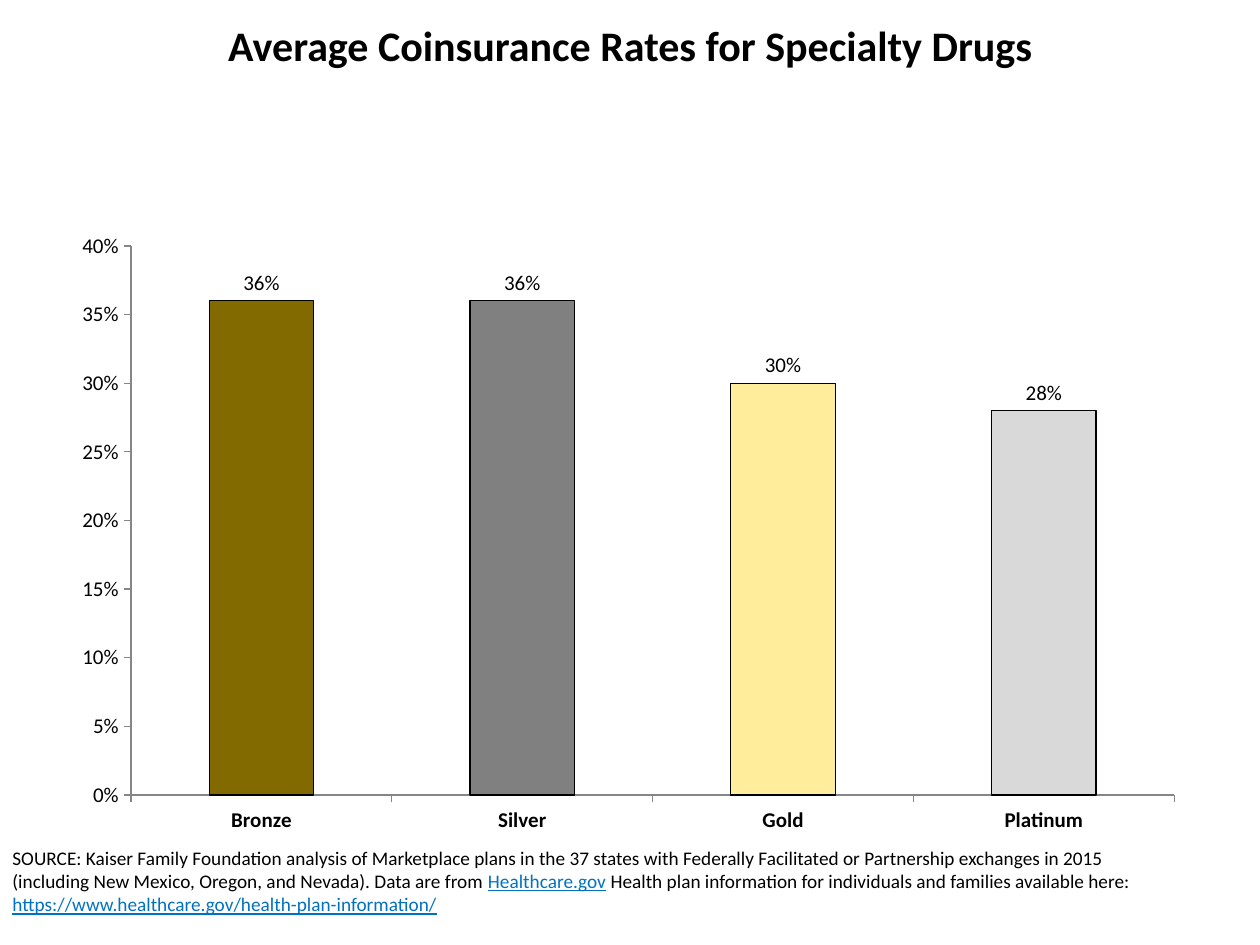
from typing import NamedTuple

from pptx import Presentation
from pptx.chart.data import CategoryChartData
from pptx.dml.color import RGBColor
from pptx.enum.chart import XL_CHART_TYPE, XL_LABEL_POSITION, XL_TICK_MARK
from pptx.enum.text import MSO_ANCHOR, PP_ALIGN
from pptx.oxml import parse_xml
from pptx.oxml.ns import nsdecls, qn
from pptx.util import Emu, Pt

PX = 914400 / 126
FONT = "Calibri"
BLACK, LINK, AXIS = "000000", "0072C0", "868686"


class Box(NamedTuple):
    left: int
    top: int
    width: int
    height: int


class Run(NamedTuple):
    text: str
    color: str = BLACK
    underline: bool = False


class Tier(NamedTuple):
    name: str
    rate: float
    color: str


TIERS = [
    Tier("Bronze", 0.36, "826A00"),
    Tier("Silver", 0.36, "808080"),
    Tier("Gold", 0.30, "FFED9B"),
    Tier("Platinum", 0.28, "D9D9D9"),
]
TITLE = [Run("Average Coinsurance Rates for Specialty Drugs")]
SOURCE = [
    Run("SOURCE: Kaiser Family Foundation analysis of Marketplace plans in the 37 states "
        "with Federally Facilitated or Partnership exchanges in 2015 (including New Mexico, "
        "Oregon, and Nevada). Data are from "),
    Run("Healthcare.gov", LINK, True),
    Run(" Health plan information for individuals and families available here: "),
    Run("https://www.healthcare.gov/health-plan-information/", LINK, True),
]


def px(n: int) -> Emu:
    return Emu(round(n * PX))


def rgb(value: str) -> RGBColor:
    return RGBColor.from_string(value)


def apply(target, **values) -> None:
    for name, value in values.items():
        setattr(target, name, value)


def add_text(s, box: Box, runs: list[Run], size: int, bold: bool = False,
             align: PP_ALIGN = PP_ALIGN.LEFT) -> None:
    tf = s.shapes.add_textbox(*map(px, box)).text_frame
    apply(tf, word_wrap=True, vertical_anchor=MSO_ANCHOR.TOP)
    p = tf.paragraphs[0]
    p.alignment = align
    for run in runs:
        r = p.add_run()
        r.text = run.text
        apply(r.font, name=FONT, size=Pt(size), bold=bold, underline=run.underline)
        r.font.color.rgb = rgb(run.color)


def set_plot_area(chart, x: float, y: float, w: float, h: float) -> None:
    area = chart.plots[0]._element.getparent()
    for old in area.findall(qn("c:layout")):
        area.remove(old)
    sizes = "".join(f'<c:{k} val="{v}"/>' for k, v in zip("xywh", (x, y, w, h)))
    area.insert(0, parse_xml(
        f'<c:layout {nsdecls("c")}><c:manualLayout><c:layoutTarget val="inner"/>'
        f'<c:xMode val="edge"/><c:yMode val="edge"/>{sizes}</c:manualLayout></c:layout>'))


def add_rates_chart(s, box: Box, tiers: list[Tier]) -> None:
    data = CategoryChartData(number_format="0%")
    data.categories = [t.name for t in tiers]
    data.add_series("Series 1", [t.rate for t in tiers])
    chart = s.shapes.add_chart(XL_CHART_TYPE.COLUMN_CLUSTERED, *map(px, box), data).chart
    apply(chart, has_legend=False, has_title=False)
    apply(chart.font, name=FONT, size=Pt(12))
    chart.font.color.rgb = rgb(BLACK)

    for axis in (chart.category_axis, chart.value_axis):
        apply(axis, has_major_gridlines=False, major_tick_mark=XL_TICK_MARK.OUTSIDE,
              minor_tick_mark=XL_TICK_MARK.NONE)
        axis.format.line.color.rgb = rgb(AXIS)
        axis.format.line.width = Pt(0.75)
    chart.category_axis.tick_labels.font.bold = True
    apply(chart.value_axis, minimum_scale=0, maximum_scale=0.4, major_unit=0.05)
    apply(chart.value_axis.tick_labels, number_format="0%", number_format_is_linked=False)

    plot = chart.plots[0]
    apply(plot, gap_width=150, vary_by_categories=False, has_data_labels=True)
    apply(plot.data_labels, show_value=True, number_format="0%",
          number_format_is_linked=False, position=XL_LABEL_POSITION.OUTSIDE_END)
    series = plot.series[0]
    series.format.fill.solid()
    series.format.fill.fore_color.rgb = rgb("133559")
    for i, tier in enumerate(tiers):
        fmt = series.points[i].format
        fmt.fill.solid()
        fmt.fill.fore_color.rgb = rgb(tier.color)
        fmt.line.color.rgb = rgb(BLACK)
        fmt.line.width = Pt(0.75)
    set_plot_area(chart, 0.06, 0.04, 0.92, 0.88)


def main() -> None:
    prs = Presentation()
    apply(prs, slide_width=px(1260), slide_height=px(945))
    s = prs.slides.add_slide(prs.slide_layouts[6])
    add_text(s, Box(0, 840, 1166, 106), SOURCE, 11)
    add_text(s, Box(13, 13, 1235, 126), TITLE, 24, True, PP_ALIGN.CENTER)
    add_rates_chart(s, Box(63, 221, 1134, 624), TIERS)
    prs.save("out.pptx")


if __name__ == "__main__":
    main()
